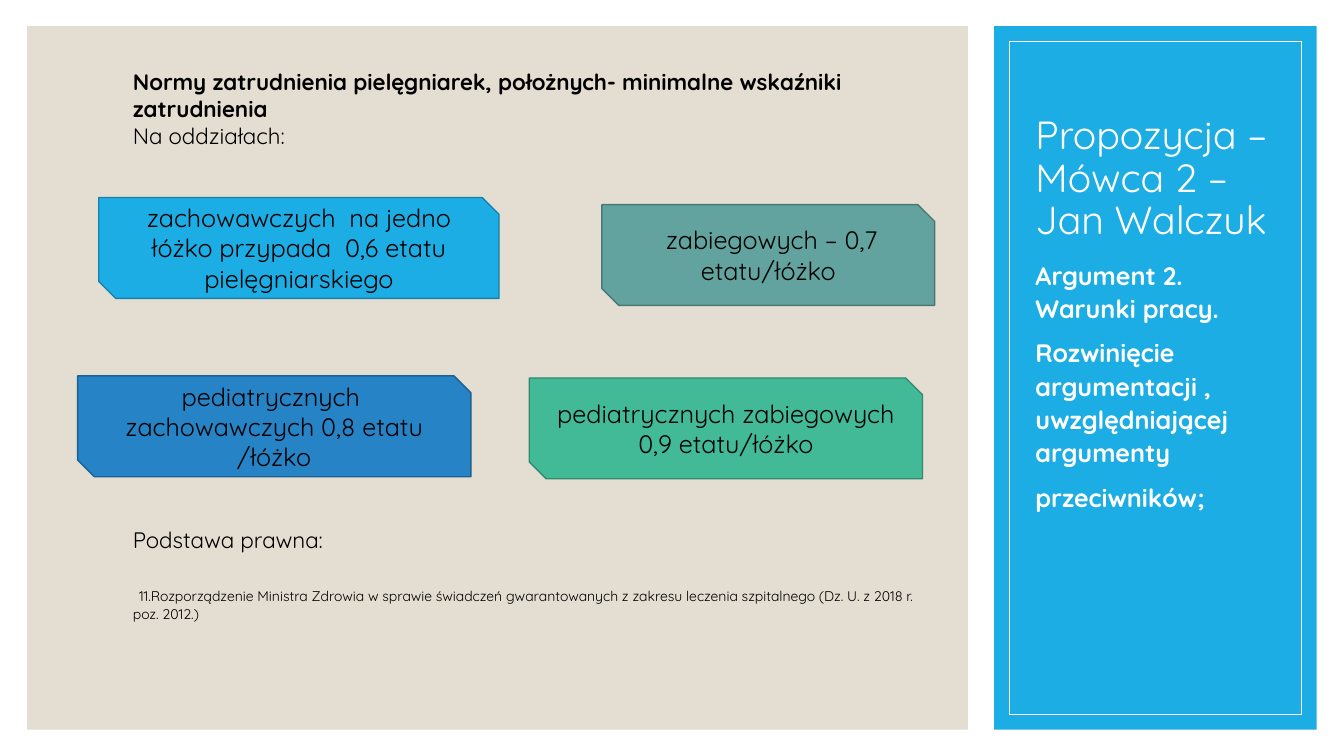
"""Build the slide on minimum nurse staffing levels."""
from lxml.etree import SubElement
from pptx import Presentation
from pptx.dml.color import RGBColor
from pptx.enum.shapes import MSO_SHAPE
from pptx.enum.text import MSO_ANCHOR, MSO_AUTO_SIZE, PP_ALIGN
from pptx.oxml.ns import qn
from pptx.util import Pt

PX = 9144
FONT = "Quicksand"
WHITE = RGBColor(0xFF, 0xFF, 0xFF)
BLACK = RGBColor(0, 0, 0)
SAND = RGBColor(0xE3, 0xDE, 0xD1)
SKY = RGBColor(0x1C, 0xAD, 0xE4)

TITLE = "Propozycja – Mówca 2 –Jan Walczuk"
BODY = [
    "Argument 2. Warunki pracy.",
    "Rozwinięcie argumentacji , uwzględniającej argumenty",
    "przeciwników;",
]
NOTE = [
    (0, [("Normy zatrudnienia pielęgniarek, położnych- minimalne wskaźniki zatrudnienia", 16, True)]),
    (0, [("Na oddziałach:", 16, False)]),
    (269, [("Podstawa prawna:", 16, False)]),
    (19, [
        (" ", 16, False),
        ("11.Rozporządzenie Ministra Zdrowia w sprawie świadczeń gwarantowanych z zakresu "
         "leczenia szpitalnego (Dz. U. z 2018 r. poz. 2012.)", 10, False),
    ]),
]
PANELS = [
    ((27, 26, 933, 698), SAND, None),
    ((986, 26, 320, 698), SKY, None),
    ((1001, 41, 290, 668), None, WHITE),
]
WARDS = [
    ("zachowawczych  na jedno łóżko przypada  0,6 etatu pielęgniarskiego",
     (98, 196, 397, 100), SKY, RGBColor(0x15, 0x80, 0xA9)),
    ("pediatrycznych  zachowawczych 0,8 etatu /łóżko",
     (77, 373, 390, 100), RGBColor(0x26, 0x83, 0xC6), RGBColor(0x1C, 0x61, 0x92)),
    ("pediatrycznych zabiegowych 0,9 etatu/łóżko",
     (525, 375, 390, 100), RGBColor(0x42, 0xBA, 0x97), RGBColor(0x31, 0x8A, 0x70)),
    (" zabiegowych – 0,7 etatu/łóżko",
     (597, 203, 330, 100), RGBColor(0x62, 0xA3, 0x9F), RGBColor(0x49, 0x79, 0x76)),
]


def scale(area):
    return [n * PX for n in area]


def place(box, area):
    box.left, box.top, box.width, box.height = scale(area)
    box.element.getparent().append(box.element)


def draw(kind, area, fill, line, width):
    shape = slide.shapes.add_shape(kind, *scale(area))
    shape.shadow.inherit = False
    if fill is None:
        shape.fill.background()
    else:
        shape.fill.solid()
        shape.fill.fore_color.rgb = fill
    if line is None:
        shape.line.fill.background()
    else:
        shape.line.color.rgb = line
        shape.line.width = Pt(width)
    return shape


def write(box, paras, color=BLACK, align=PP_ALIGN.LEFT, anchor=MSO_ANCHOR.TOP, space=1.0):
    frame = box.text_frame
    frame.word_wrap = True
    frame.auto_size = MSO_AUTO_SIZE.NONE
    frame.vertical_anchor = anchor
    for i, (gap, runs) in enumerate(paras):
        para = frame.add_paragraph() if i else frame.paragraphs[0]
        para.alignment = align
        para.line_spacing = space
        para.space_before = Pt(gap)
        props = para._p.get_or_add_pPr()
        props.set("marL", "0")
        props.set("indent", "0")
        SubElement(props, qn("a:buNone"))
        for text, size, bold in runs:
            run = para.add_run()
            run.text = text
            run.font.name = FONT
            run.font.size = Pt(size)
            run.font.bold = bold
            run.font.color.rgb = color


deck = Presentation()
deck.slide_width, deck.slide_height = scale((1333, 750))
slide = deck.slides.add_slide(deck.slide_layouts[1])

for area, fill, line in PANELS:
    draw(MSO_SHAPE.RECTANGLE, area, fill, line, 0.5)

title, body = slide.placeholders
place(title, (1017, 66, 266, 180))
write(title, [(0, [(TITLE, 28, False)])], color=WHITE, anchor=MSO_ANCHOR.BOTTOM, space=0.9)
place(body, (1017, 250, 266, 383))
write(body, [(8, [(text, 18, True)]) for text in BODY], color=WHITE, space=1.1)

note = slide.shapes.add_textbox(*scale((122, 63, 804, 619)))
write(note, NOTE)

for text, area, fill, line in WARDS:
    ward = draw(MSO_SHAPE.SNIP_2_DIAG_RECTANGLE, area, fill, line, 1)
    write(ward, [(0, [(text, 18, False)])], align=PP_ALIGN.CENTER, anchor=MSO_ANCHOR.MIDDLE)

deck.save("out.pptx")
